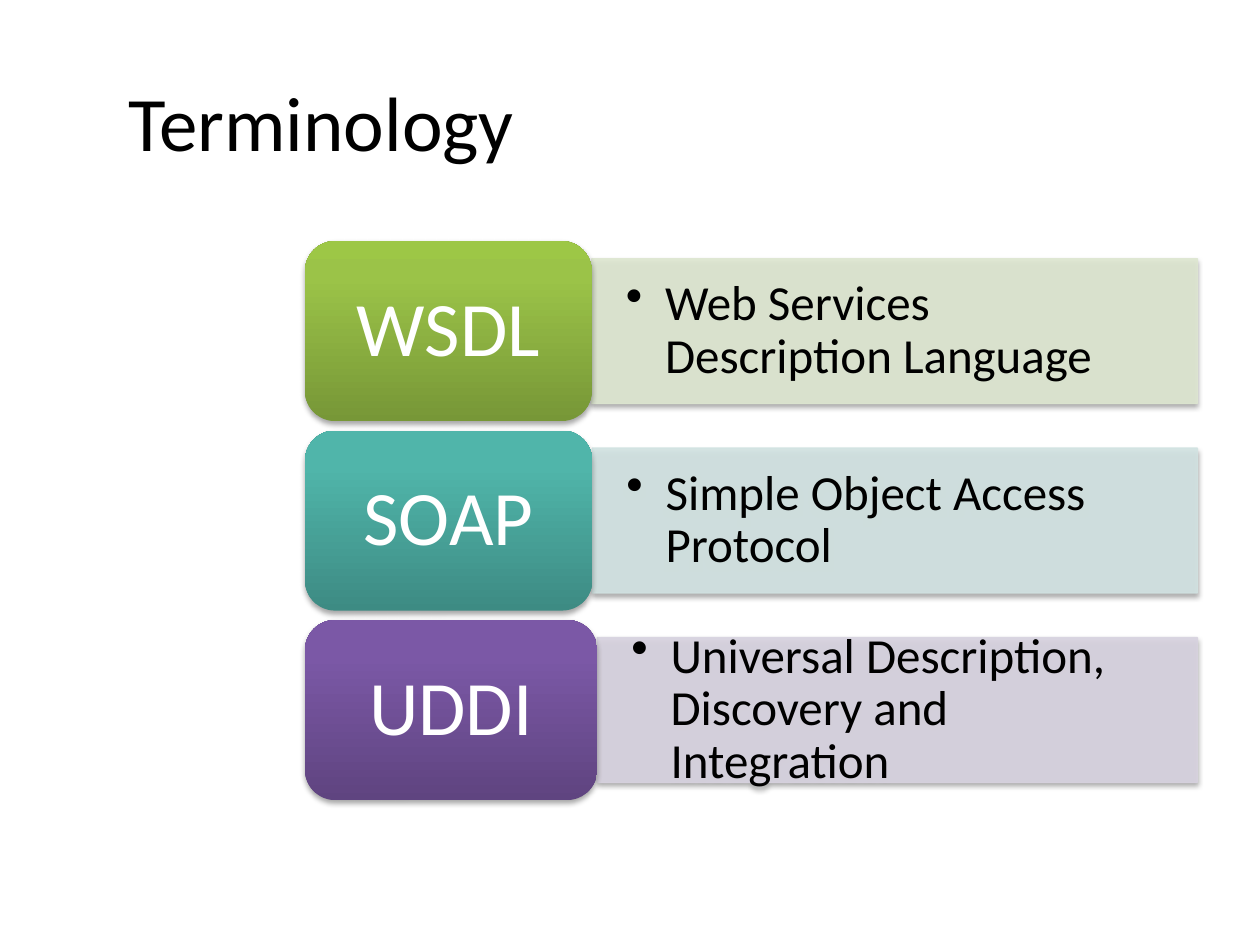
"""Build the Terminology slide: three acronyms, each beside its meaning."""
from lxml.etree import SubElement as Sub
from pptx import Presentation as Deck
from pptx.dml.color import RGBColor as Rgb
from pptx.enum.shapes import MSO_SHAPE as Kind
from pptx.enum.text import MSO_ANCHOR as Anchor, PP_ALIGN as Align
from pptx.oxml.ns import qn
from pptx.util import Cm, Pt

HUES = {
    "black": "000000", "white": "FFFFFF",
    "lime": ("779737", "9BC348", "9DC746"), "pale lime": "DEE7D1",
    "teal": ("3D8B83", "50B5AA", "4EB8AC"), "pale teal": "D2E3E2",
    "plum": ("5F4480", "7B58A6", "7C57A8"), "pale plum": "D8D3E0",
}
STOPS = (0, 80000, 100000)
ROWS = (
    ("WSDL", "Web Services Description Language", "lime", 5.78),
    ("SOAP", "Simple Object Access Protocol", "teal", 5.79),
    ("UDDI", "Universal Description, Discovery and Integration", "plum", 5.89),
)
LEFT, RIGHT, TOP, STEP = 6.15, 24.14, 4.86, 3.82
TALL, LOW = 3.63, 2.92
TITLE = {"left": Cm(2.34), "top": Cm(0.84), "width": Cm(22.43), "height": Cm(3.18)}
BADGE = {"margin_left": Cm(0.64), "margin_right": Cm(0.64),
         "margin_top": Cm(0.41), "margin_bottom": Cm(0.41)}
PANEL = {"margin_left": Cm(0.69), "margin_right": Cm(0.69),
         "margin_top": Cm(0.36), "margin_bottom": Cm(0.36)}
FRAME = {"word_wrap": True, "vertical_anchor": Anchor.MIDDLE}


def apply(item, form):
    """Set each attribute in form on item."""
    for key, value in form.items():
        setattr(item, key, value)


def style(para, size, hue, align):
    """Give a paragraph its font, colour and alignment."""
    para.alignment = align
    apply(para.font, {"name": "Calibri", "size": Pt(size)})
    para.font.color.rgb = Rgb.from_string(HUES[hue])


def shade(shape):
    """Add a soft shadow below a shape."""
    shape.shadow.inherit = False
    glow = shape.element.spPr.find(qn("a:effectLst"))
    drop = Sub(glow, qn("a:outerShdw"), blurRad="40000", dist="23000",
               dir="5400000", rotWithShape="0")
    tint = Sub(drop, qn("a:srgbClr"), val=HUES["black"])
    Sub(tint, qn("a:alpha"), val="35000")


def add_box(slide, kind, place, text, margins):
    """Add a preset shape with text and return it with its paragraph."""
    shape = slide.shapes.add_shape(kind, *map(Cm, place))
    frame = shape.text_frame
    apply(frame, {**FRAME, **margins})
    frame.text = text
    para = frame.paragraphs[0]
    para.line_spacing = 0.9
    return shape, para


def add_panel(slide, place, text, hue):
    """Add a pale panel with one bullet."""
    shape, para = add_box(slide, Kind.RECTANGLE, place, text, PANEL)
    tint = Rgb.from_string(HUES[hue])
    shape.fill.solid()
    shape.fill.fore_color.rgb = tint
    shape.line.color.rgb = tint
    shape.line.width = Pt(0.75)
    for node in shape.element.spPr.iter(qn("a:srgbClr")):
        Sub(node, qn("a:alpha"), val="90000")
    shade(shape)
    props = para._p.get_or_add_pPr()
    props.set("marL", str(Cm(0.79)))
    props.set("indent", str(-Cm(0.79)))
    Sub(props, qn("a:buChar"), char="•")
    style(para, 28, "black", Align.LEFT)


def add_badge(slide, place, text, hue):
    """Add a rounded badge with a vertical gradient."""
    shape, para = add_box(slide, Kind.ROUNDED_RECTANGLE, place, text, BADGE)
    shape.fill.gradient()
    shape.fill.gradient_angle = 90
    stops = shape.element.spPr.find(".//" + qn("a:gsLst"))
    stops.clear()
    for spot, tint in zip(STOPS, HUES[hue]):
        stop = Sub(stops, qn("a:gs"), pos=str(spot))
        Sub(stop, qn("a:srgbClr"), val=tint)
    shape.line.fill.background()
    shade(shape)
    style(para, 44, "white", Align.CENTER)


def main():
    """Build and save the slide."""
    deck = Deck()
    apply(deck, {"slide_width": Cm(25.4), "slide_height": Cm(19.05)})
    slide = deck.slides.add_slide(deck.slide_layouts[5])
    title = slide.shapes.title
    apply(title, TITLE)
    title.text_frame.text = "Terminology"
    title.text_frame.vertical_anchor = Anchor.MIDDLE
    style(title.text_frame.paragraphs[0], 44, "black", Align.LEFT)
    for row, (term, text, hue, width) in enumerate(ROWS):
        top, edge = TOP + row * STEP, LEFT + width
        inset = (TALL - LOW) / 2
        add_panel(slide, (edge, top + inset, RIGHT - edge, LOW), text, "pale " + hue)
        add_badge(slide, (LEFT, top, width, TALL), term, hue)
    deck.save("out.pptx")


if __name__ == "__main__":
    main()
